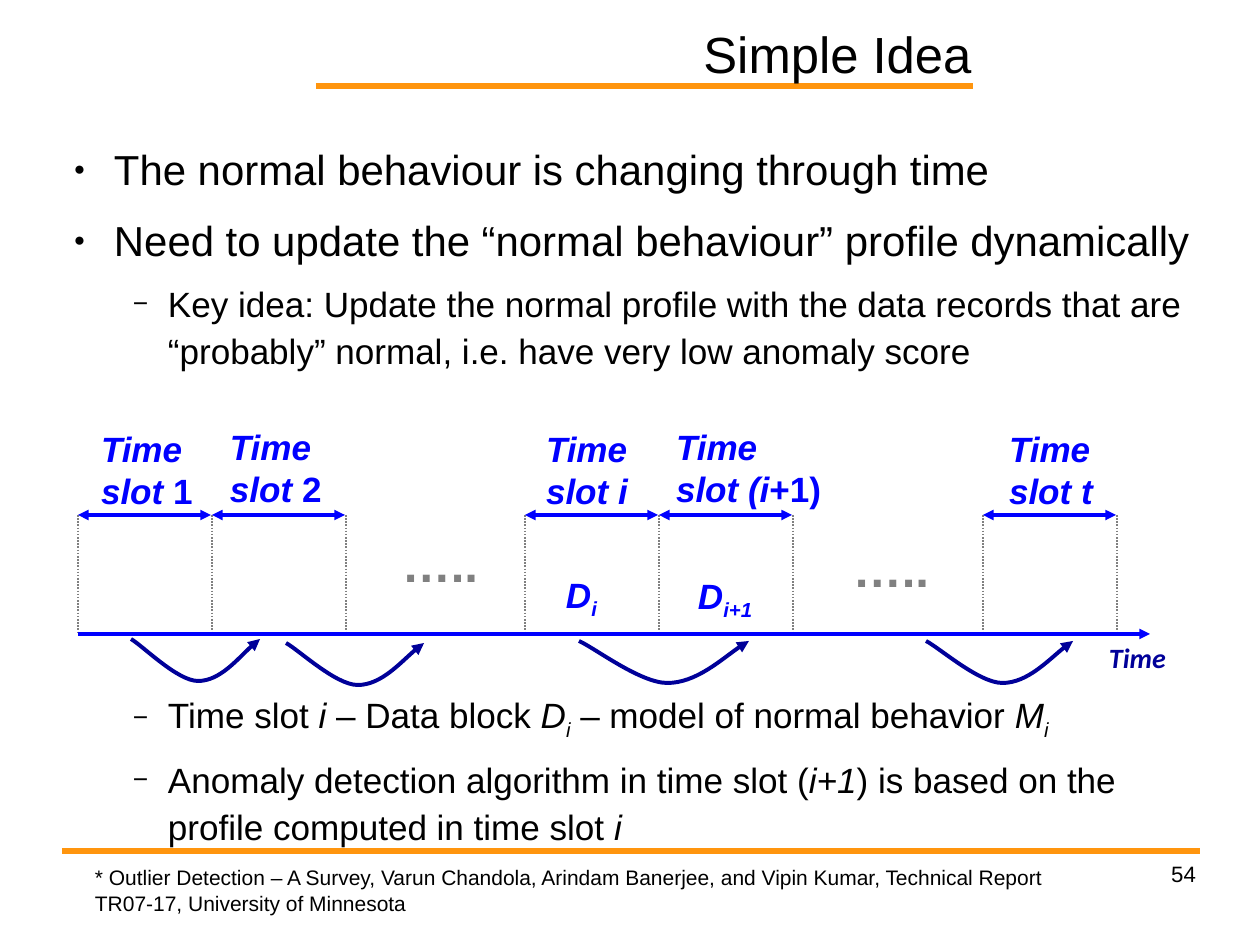
from pptx import Presentation
from pptx import util as u
from pptx.dml.color import RGBColor
from pptx.enum import dml, shapes, text
from pptx.oxml.ns import qn
from lxml import etree

PX = 8000
COLORS = {"black": "000000", "orange": "FF950E", "blue": "0000FF",
          "navy": "000099", "gray": "808080"}
SLOT_WIDTH = 134
BULLETS = {0: ("●", 45, 54, 40, 26.4), 1: ("−", 75, 108, 35, 22.1)}


def px(value):
    return u.Emu(round(value * PX))


def rgb(name):
    return RGBColor.from_string(COLORS[name])


def child(parent, tag, **attributes):
    return etree.SubElement(parent, qn(tag), attributes)


def write(paragraph, runs, size, color="black", font="Arial", bold=False):
    for words, style in runs:
        run = paragraph.add_run()
        run.text = words
        run.font.size, run.font.name = u.Pt(size), font
        run.font.bold, run.font.italic = bold, "i" in style
        run.font.color.rgb = rgb(color)
        if "_" in style:
            run._r.get_or_add_rPr().set("baseline", "-25000")


def place(holder, box):
    holder.left, holder.top, holder.width, holder.height = map(px, box)
    frame = holder.text_frame
    frame.auto_size, frame.word_wrap = text.MSO_AUTO_SIZE.NONE, True
    frame.margin_left = frame.margin_right = 0
    frame.margin_top = frame.margin_bottom = 0
    return frame


def add_label(slide, box, runs, size, color="blue", font="Arial", bold=True,
              align=text.PP_ALIGN.LEFT, inset=(12, 7)):
    frame = place(slide.shapes.add_textbox(0, 0, 0, 0), box)
    frame.margin_left = frame.margin_right = px(inset[0])
    frame.margin_top = frame.margin_bottom = px(inset[1])
    frame.paragraphs[0].alignment = align
    write(frame.paragraphs[0], runs, size, color, font, bold)


def style_line(stroke, color, width, arrows=()):
    stroke.line.color.rgb = rgb(color)
    stroke.line.width = u.Pt(width)
    outline = stroke._element.spPr.find(qn("a:ln"))
    for end in arrows:
        child(outline, end, type="triangle")


def add_line(slide, start, end, color, width, arrows=()):
    line = slide.shapes.add_connector(
        shapes.MSO_CONNECTOR.STRAIGHT, *map(px, (*start, *end)))
    style_line(line, color, width, arrows)
    child(line._element.spPr, "a:effectLst")
    return line


def add_update_arc(slide, left, top, width, height=42):
    builder = slide.shapes.build_freeform(px(left), px(top))
    builder.add_line_segments(
        [(px(left + 0.52 * width), px(top + height)), (px(left + width), px(top))],
        close=False)
    arc = builder.convert_to_shape()
    bends = [[(0.09, 0.16), (0.36, 1), (0.52, 1)],
             [(0.69, 1), (0.9, 0.22), (1, 0)]]
    segments = list(arc._element.iter(qn("a:lnTo")))
    for segment, bend in zip(segments, bends):
        curve = etree.Element(qn("a:cubicBezTo"))
        for x, y in bend:
            child(curve, "a:pt", x=str(px(x * width)), y=str(px(y * height)))
        segment.getparent().replace(segment, curve)
    arc.fill.background()
    arc.shadow.inherit = False
    style_line(arc, "navy", 2.5, ["a:tailEnd"])


def add_title(slide, box):
    frame = place(slide.shapes.title, box)
    frame.vertical_anchor = text.MSO_ANCHOR.MIDDLE
    frame.paragraphs[0].alignment = text.PP_ALIGN.RIGHT
    write(frame.paragraphs[0], [("Simple Idea", "")], 32)


def add_rules(slide):
    for left, right, y in [(316, 973, 86), (62, 1200, 851)]:
        rule = add_line(slide, (left, y), (right, y), "orange", 4.31)
        slide.shapes._spTree.insert(2, rule._element)


def add_body(slide, box):
    points = [
        (0, 0, [("The normal behaviour is changing through time", "")]),
        (0, 9.9, [("Need to update the “normal behaviour” profile dynamically", "")]),
        (1, 8.3, [("Key idea: Update the normal profile with the data records that are "
                   "“probably” normal, i.e. have very low anomaly score", "")]),
        (1, 200, [("Time slot ", ""), ("i ", "i"), ("– Data block ", ""), ("D", "i"),
                  ("i", "i_"), (" – model of normal behavior ", ""), ("M", "i"),
                  ("i", "i_")]),
        (1, 8.3, [("Anomaly detection algorithm in time slot (", ""), ("i+1", "i"),
                  (") is based on the profile computed in time slot ", ""), ("i", "i")]),
    ]
    frame = place(slide.placeholders[1], box)
    for index, (level, before, runs) in enumerate(points):
        point = frame.add_paragraph() if index else frame.paragraphs[0]
        mark, percent, margin, hang, size = BULLETS[level]
        point.level = level
        point.line_spacing, point.space_before = 1.1, u.Pt(before)
        properties = point._p.get_or_add_pPr()
        properties.set("marL", str(px(margin)))
        properties.set("indent", str(px(-hang)))
        child(child(properties, "a:buClr"), "a:srgbClr", val=COLORS["black"])
        child(properties, "a:buSzPct", val=str(percent * 1000))
        child(properties, "a:buFont", typeface="Arial")
        child(properties, "a:buChar", char=mark)
        write(point, runs, size)


def add_timeline(slide, box):
    left, top, width, height = box
    both_ends = ["a:headEnd", "a:tailEnd"]
    slot_groups = [
        (0, [(11, 158, [("Time slot", "i"), (" 1", "")]),
             (6, 158, [("Time slot", "i"), (" 2", "")])]),
        (447, [(9, 158, [("Time slot i", "i")]),
               (5, 177, [("Time slot (i", "i"), ("+1)", "")])]),
        (905, [(14, 158, [("Time slot t", "i")])]),
    ]
    for start, slots in slot_groups:
        for edge in range(len(slots) + 1):
            x = left + start + edge * SLOT_WIDTH
            border = add_line(slide, (x, top), (x, top + height - 2), "gray", 1)
            border.line.dash_style = dml.MSO_LINE.ROUND_DOT
        for order, (shift, label_width, runs) in enumerate(slots):
            x = left + start + order * SLOT_WIDTH
            add_line(slide, (x, top), (x + SLOT_WIDTH - 1, top), "blue", 2.25, both_ends)
            add_label(slide, (x + shift, top - 95 - 2 * order, label_width, 98), runs, 22.1)
    add_line(slide, (left, top + height), (left + width, top + height),
             "blue", 2.25, ["a:tailEnd"])
    for x, y in [(312, 11), (763, 16)]:
        add_label(slide, (left + x, top + y, 110, 72), [("…..", "")], 30.9, "gray")
    for x, y, block_width, index in [(476, 51, 70, "i"), (608, 52, 98, "i+1")]:
        add_label(slide, (left + x, top + y, block_width, 56),
                  [("D", "i"), (index, "i_")], 22.1)
    for x, y, span in [(53, 5, 129), (208, 9, 138), (501, 7, 170), (848, 7, 147)]:
        add_update_arc(slide, left + x, top + height + y, span)
    add_label(slide, (left + 994, top + height, 131, 47), [("Time", "i")], 17.6,
              "navy", "Calibri", align=text.PP_ALIGN.CENTER)


def add_footer(slide, box):
    left, top, width, height = box
    add_label(slide, (left, top, 1018, height), [(
        "* Outlier Detection – A Survey, Varun Chandola, Arindam Banerjee, and Vipin Kumar, "
        "Technical Report TR07-17, University of Minnesota", "")], 13.2,
        "black", bold=False, inset=(11, 6))
    add_label(slide, (left + width - 294, top + 1, 294, height), [("54", "")], 14,
              "black", bold=False, align=text.PP_ALIGN.RIGHT, inset=(0, 0))


def main():
    deck = Presentation()
    deck.slide_width, deck.slide_height = px(1260), px(945)
    slide = deck.slides.add_slide(deck.slide_layouts[1])
    add_rules(slide)
    add_title(slide, (686, 9, 286, 89))
    add_body(slide, (60, 139, 1136, 721))
    add_timeline(slide, (78, 515, 1072, 119))
    add_footer(slide, (84, 859, 1112, 63))
    deck.save("out.pptx")


if __name__ == "__main__":
    main()
